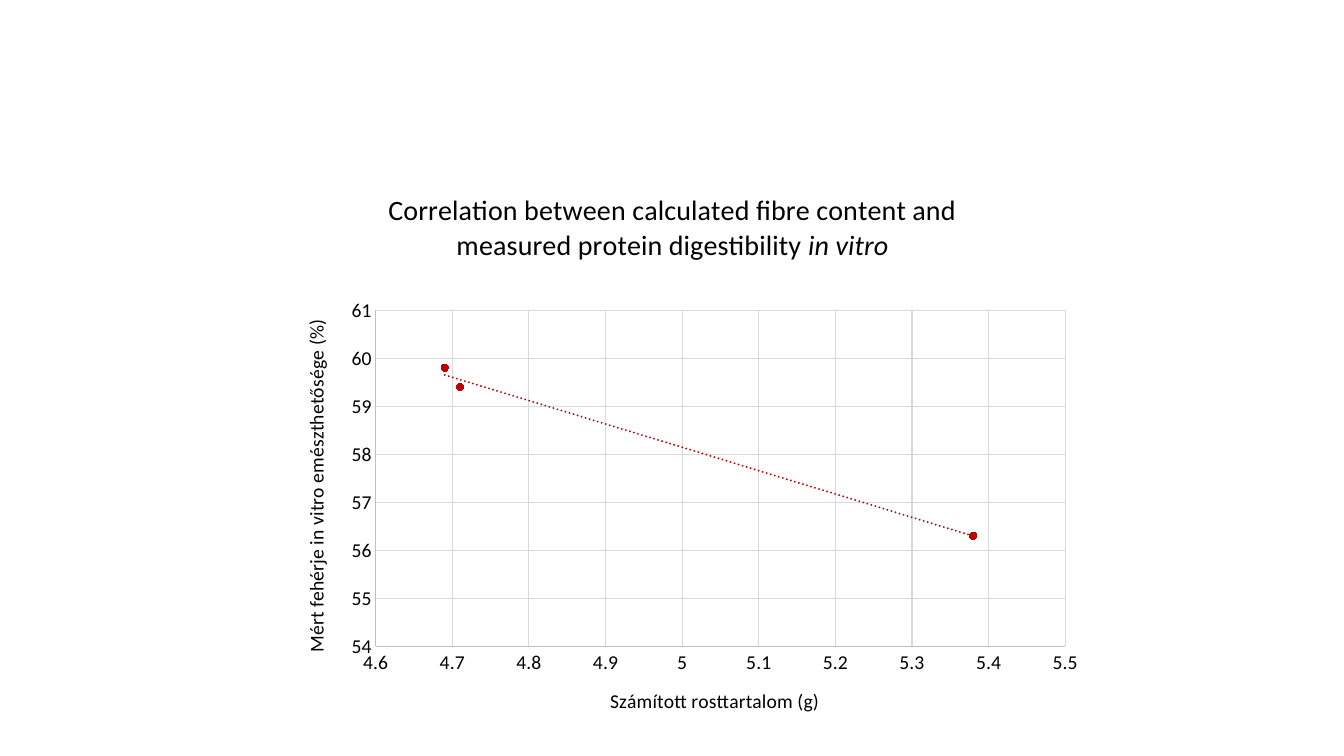
from dataclasses import dataclass

from lxml import etree
from pptx import Presentation
from pptx.chart.data import XyChartData
from pptx.dml.color import RGBColor
from pptx.enum.chart import XL_CHART_TYPE as ChartType
from pptx.enum.chart import XL_MARKER_STYLE as Marker
from pptx.enum.chart import XL_TICK_MARK as Tick
from pptx.oxml import parse_xml
from pptx.oxml.ns import nsdecls, qn
from pptx.util import Inches, Pt

COLORS = {"text": "000000", "axis": "BFBFBF", "grid": "D9D9D9", "data": "C00000"}
FONT = "Calibri"
POINTS = [(4.71, 59.4), (4.69, 59.8), (5.38, 56.3)]
PLOT_AREA = {"x": 0.148, "y": 0.252, "w": 0.818, "h": 0.614}


@dataclass
class AxisSpec:
    title: str
    low: float
    high: float
    step: float


FIBRE = AxisSpec("Számított rosttartalom (g)", 4.6, 5.5, 0.1)
DIGESTIBILITY = AxisSpec("Mért fehérje in vitro emészthetősége (%)", 54, 61, 1)


def color(name: str) -> RGBColor:
    return RGBColor.from_string(COLORS[name])


def style_font(font, size: float, italic: bool = False) -> None:
    for key, value in {"name": FONT, "size": Pt(size), "bold": False, "italic": italic}.items():
        setattr(font, key, value)
    font.color.rgb = color("text")


def style_line(line, name: str) -> None:
    line.width = Pt(0.75)
    line.color.rgb = color(name)


def set_title(owner, size: float, *parts: tuple[str, bool]) -> None:
    """Write a chart or axis title from (text, italic) parts."""
    p = owner.text_frame.paragraphs[0]
    for text, italic in parts:
        r = p.add_run()
        r.text = text
        style_font(r.font, size, italic)


def style_axis(axis, spec: AxisSpec) -> None:
    settings = {
        "minimum_scale": spec.low,
        "maximum_scale": spec.high,
        "major_unit": spec.step,
        "major_tick_mark": Tick.NONE,
        "minor_tick_mark": Tick.NONE,
        "has_major_gridlines": True,
    }
    for key, value in settings.items():
        setattr(axis, key, value)
    labels = axis.tick_labels
    labels.number_format = "General"
    labels.number_format_is_linked = False
    style_font(labels.font, 14)
    style_line(axis.format.line, "axis")
    style_line(axis.major_gridlines.format.line, "grid")
    set_title(axis.axis_title, 14, (spec.title, False))


def place_plot(chart) -> None:
    """Fix the inner plot area as fractions of the chart."""
    area = chart.element.find(".//" + qn("c:plotArea"))
    old = area.find(qn("c:layout"))
    if old is not None:
        area.remove(old)
    layout = etree.Element(qn("c:layout"))
    manual = etree.SubElement(layout, qn("c:manualLayout"))
    values = {"layoutTarget": "inner", "xMode": "edge", "yMode": "edge", **PLOT_AREA}
    for tag, value in values.items():
        etree.SubElement(manual, qn(f"c:{tag}")).set("val", str(value))
    area.insert(0, layout)


def add_trendline(series) -> None:
    trend = parse_xml(
        f'<c:trendline {nsdecls("c", "a")}><c:spPr><a:ln w="{Pt(1.5)}" cap="rnd">'
        f'<a:solidFill><a:srgbClr val="{COLORS["data"]}"/></a:solidFill>'
        '<a:prstDash val="sysDot"/></a:ln></c:spPr><c:trendlineType val="linear"/>'
        '<c:dispRSqr val="0"/><c:dispEq val="0"/></c:trendline>'
    )
    series._element.find(qn("c:xVal")).addprevious(trend)


def style_series(series) -> None:
    series.format.line.fill.background()
    marker = series.marker
    marker.style = Marker.CIRCLE
    marker.size = 5
    marker.format.fill.solid()
    marker.format.fill.fore_color.rgb = color("data")
    marker.format.line.color.rgb = color("data")
    add_trendline(series)


def main() -> None:
    prs = Presentation()
    prs.slide_width, prs.slide_height = Inches(13.33), Inches(7.5)
    s = prs.slides.add_slide(prs.slide_layouts[6])

    data = XyChartData()
    measured = data.add_series("Series 1")
    for fibre, digestibility in POINTS:
        measured.add_data_point(fibre, digestibility)
    frame = s.shapes.add_chart(
        ChartType.XY_SCATTER, Inches(2.49), Inches(1.71), Inches(8.36), Inches(5.43), data
    )

    chart = frame.chart
    chart.has_legend = False
    chart.plots[0].vary_by_categories = False
    style_font(chart.font, 16)
    set_title(
        chart.chart_title,
        20,
        ("Correlation between calculated fibre content and measured protein digestibility ", False),
        ("in vitro", True),
    )
    chart.chart_title.include_in_layout = False
    style_axis(chart.category_axis, FIBRE)
    style_axis(chart.value_axis, DIGESTIBILITY)
    style_series(chart.plots[0].series[0])
    place_plot(chart)
    prs.save("out.pptx")


if __name__ == "__main__":
    main()
